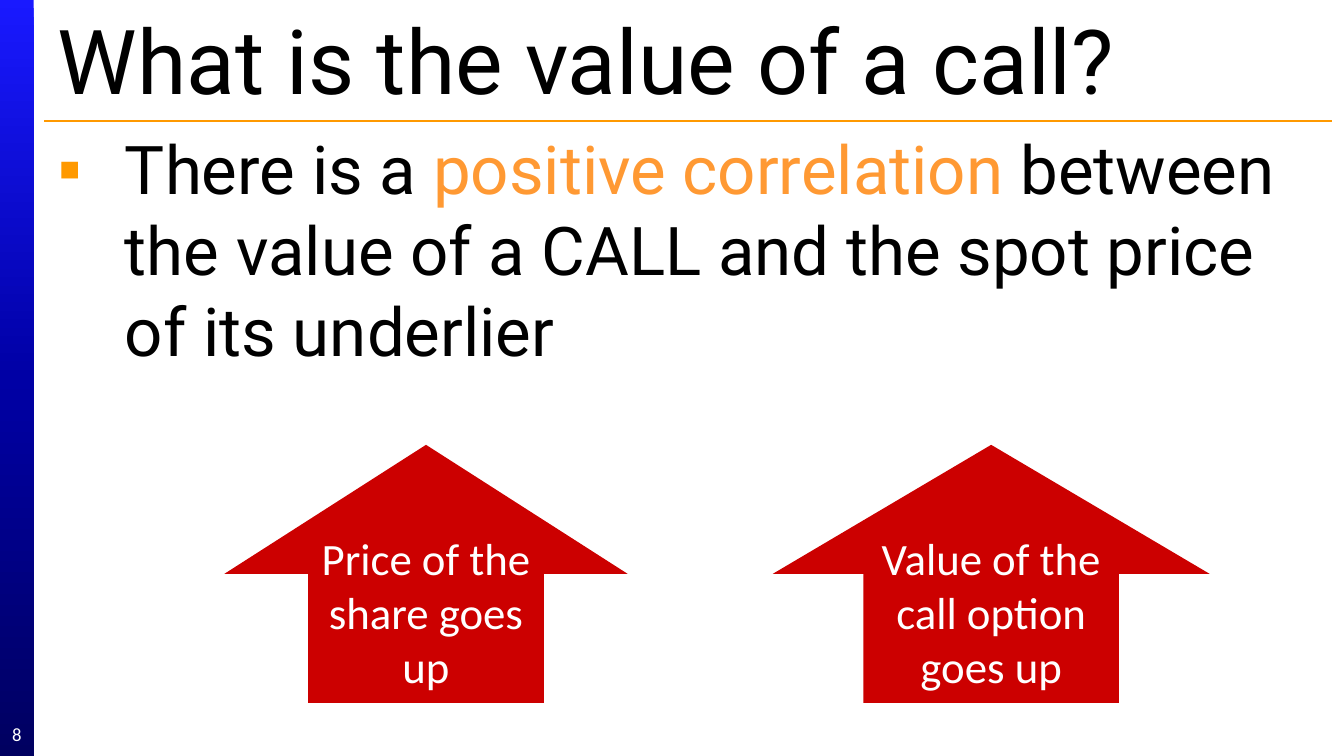
from copy import deepcopy

from lxml import etree
from pptx import Presentation
from pptx.dml.color import RGBColor
from pptx.enum.shapes import MSO_CONNECTOR, MSO_SHAPE
from pptx.enum.text import MSO_ANCHOR, MSO_AUTO_SIZE, PP_ALIGN
from pptx.oxml.ns import qn
from pptx.util import Inches, Pt

LEFT, CENTER = PP_ALIGN.LEFT, PP_ALIGN.CENTER
TOP, MIDDLE = MSO_ANCHOR.TOP, MSO_ANCHOR.MIDDLE
NO_FIT = MSO_AUTO_SIZE.NONE
RECT, ARROW = MSO_SHAPE.RECTANGLE, MSO_SHAPE.UP_ARROW
STRAIGHT = MSO_CONNECTOR.STRAIGHT

# 16:9 page, in inches
WIDTH = 10
HEIGHT = WIDTH * 9 / 16

COLORS = {
    "black": "000000", "white": "FFFFFF", "red": "CC0000",
    "rule": "FF9900", "accent": "FF9933",
    "bar top": "1919FF", "bar mid": "0000A5", "bar end": "000060",
}


def color(name):
    return RGBColor.from_string(COLORS[name])


def place(shape, box):
    shape.left, shape.top, shape.width, shape.height = map(Inches, box)


def write(shape, *runs, size, font="Roboto", align=LEFT, anchor=MIDDLE, inset=None):
    """Fill a shape with one paragraph of (text, color) runs."""
    frame = shape.text_frame
    frame.word_wrap = True
    frame.auto_size = NO_FIT
    frame.vertical_anchor = anchor
    if inset is not None:
        frame.margin_left = frame.margin_right = Inches(inset)
        frame.margin_top = frame.margin_bottom = Inches(inset)
    para = frame.paragraphs[0]
    para.alignment = align
    for text, tint in runs:
        run = para.add_run()
        run.text = text
        run.font.size = Pt(size)
        run.font.name = font
        run.font.color.rgb = color(tint)
    return para


def add_bullet(para, char, tint, indent):
    props = para._p.get_or_add_pPr()
    props.set("marL", str(Inches(indent)))
    props.set("indent", str(-Inches(indent)))
    paint = etree.SubElement(props, qn("a:buClr"))
    etree.SubElement(paint, qn("a:srgbClr"), val=COLORS[tint])
    etree.SubElement(props, qn("a:buChar"), char=char)


def add_bar(slide, box, number):
    """Gradient side bar with the page number near its foot."""
    x, y, w, h = box
    bar = slide.shapes.add_shape(RECT, *map(Inches, box))
    bar.shadow.inherit = False
    bar.line.fill.background()
    bar.fill.gradient()
    bar.fill.gradient_angle = 270
    stops = bar._element.spPr.find(qn("a:gradFill")).find(qn("a:gsLst"))
    stops.insert(1, deepcopy(stops[0]))
    tints = ("bar top", "bar mid", "bar end")
    for i, (stop, tint) in enumerate(zip(bar.fill.gradient_stops, tints)):
        stop.position = i / 2
        stop.color.rgb = color(tint)

    label = slide.shapes.add_textbox(*map(Inches, (x, y + h - 0.31, w, 0.3)))
    write(label, (number, "white"), size=10, font="Calibri", align=CENTER, inset=0)


def add_head(slide, box, text):
    """Title with a thin rule below it."""
    x, y, w, h = box
    title = slide.shapes.title
    place(title, (x, y, w, 0.75))
    write(title, (text, "black"), size=48)
    ends = (x, y + h, x + w, y + h)
    rule = slide.shapes.add_connector(STRAIGHT, *map(Inches, ends))
    rule.line.color.rgb = color("rule")
    rule.line.width = Pt(0.75)
    etree.SubElement(rule._element.spPr, qn("a:effectLst"))


def add_body(slide, box, *runs):
    body = slide.placeholders[1]
    place(body, box)
    para = write(body, *runs, size=36, anchor=TOP)
    add_bullet(para, "▪", "rule", 0.5)


def add_arrow(slide, box, text):
    arrow = slide.shapes.add_shape(ARROW, *map(Inches, box))
    arrow.shadow.inherit = False
    arrow.adjustments[0] = 0.585
    arrow.adjustments[1] = 0.5
    arrow.fill.solid()
    arrow.fill.fore_color.rgb = color("red")
    arrow.line.fill.background()
    write(arrow, (text, "white"), size=24, font="Calibri", align=CENTER)


def main():
    deck = Presentation()
    deck.slide_width, deck.slide_height = Inches(WIDTH), Inches(HEIGHT)
    slide = deck.slides.add_slide(deck.slide_layouts[1])

    add_bar(slide, (0, 0, 0.25, HEIGHT), "8")
    add_head(slide, (0.33, 0.06, 9.58, 0.84), "What is the value of a call?")
    add_body(
        slide, (0.33, 0.9, 9.33, 4.33),
        ("There is a ", "black"),
        ("positive correlation ", "accent"),
        ("between the value of a CALL and the spot price of its underlier", "black"),
    )

    # Cause on the left, effect on the right
    arrows = (
        (1.67, 3, "Price of the share goes up"),
        (5.75, 3.25, "Value of the call option goes up"),
    )
    for x, w, text in arrows:
        add_arrow(slide, (x, 3.31, w, 1.92), text)

    deck.save("out.pptx")


if __name__ == "__main__":
    main()
